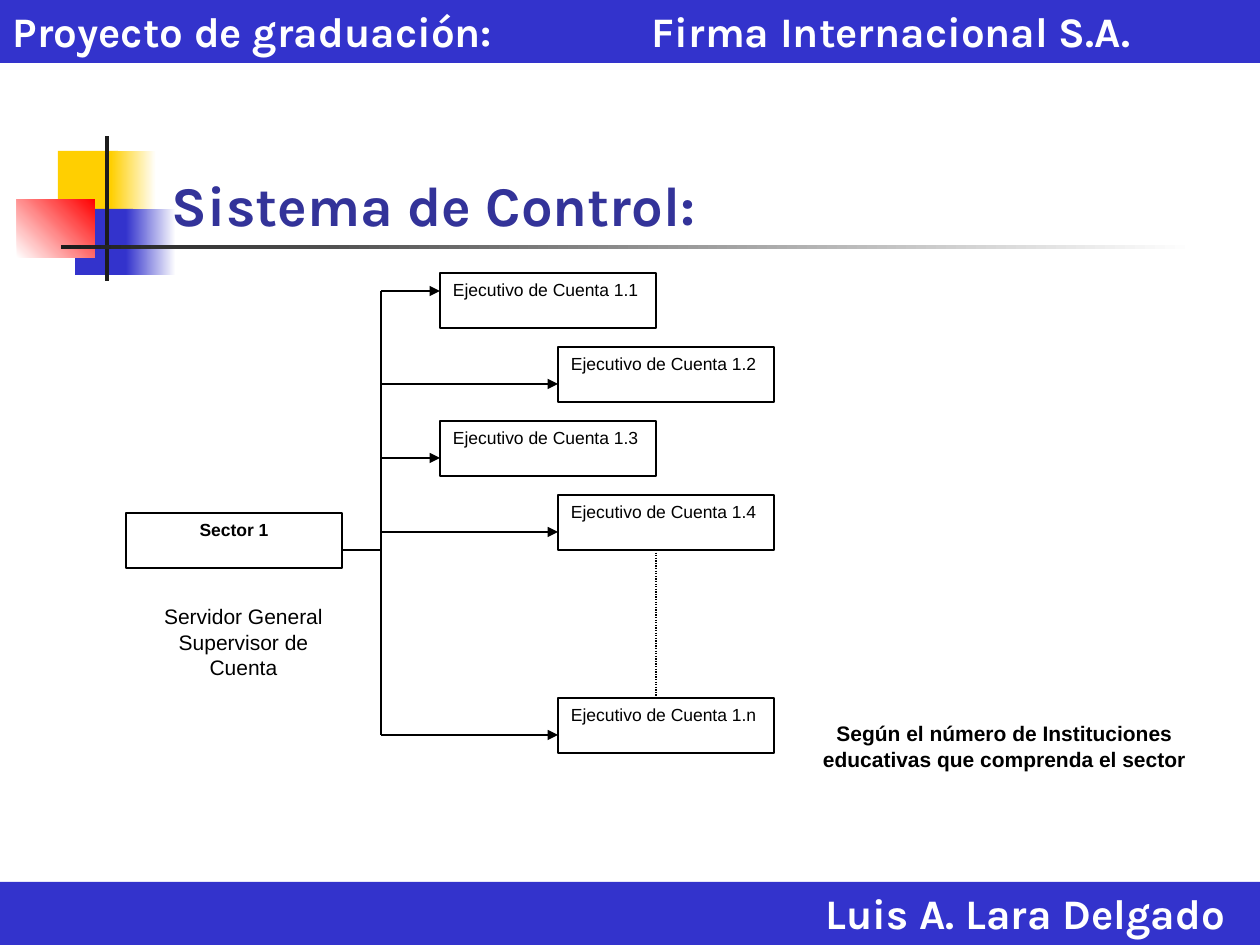
from lxml.etree import SubElement
from pptx import Presentation
from pptx.dml.color import RGBColor
from pptx.enum.dml import MSO_LINE
from pptx.enum.shapes import MSO_CONNECTOR, MSO_SHAPE
from pptx.enum.text import MSO_ANCHOR, MSO_AUTO_SIZE, PP_ALIGN
from pptx.oxml.ns import qn
from pptx.util import Emu, Pt

COLORS = {
    "white": "FFFFFF",
    "black": "000000",
    "ink": "1C1C1C",
    "blue": "3333CC",
    "navy": "333399",
    "yellow": "FFCF01",
    "red": "FF0000",
}
PX_PER_INCH = 126
INSET = 13


def px(length):
    return Emu(round(length * 914400 / PX_PER_INCH))


def rgb(name):
    return RGBColor.from_string(COLORS[name])


def write(shape, text, size=10, font="Arial", color="black", bold=False,
          align=PP_ALIGN.LEFT, anchor=MSO_ANCHOR.TOP, right=INSET, tab=None):
    frame = shape.text_frame
    frame.word_wrap = True
    frame.auto_size = MSO_AUTO_SIZE.NONE
    frame.vertical_anchor = anchor
    frame.margin_left, frame.margin_right = px(INSET), px(right)
    frame.margin_top = frame.margin_bottom = px(6)
    frame.text = text
    for paragraph in frame.paragraphs:
        paragraph.alignment = align
        if tab:
            stops = SubElement(paragraph._p.get_or_add_pPr(), qn("a:tabLst"))
            SubElement(stops, qn("a:tab"), pos=str(px(tab)), algn="l")
        for run in paragraph.runs:
            run.font.size = Pt(size)
            run.font.name = font
            run.font.bold = bold
            run.font.color.rgb = rgb(color)


class ControlSlide:
    heading = {"font": "Karla", "bold": True}
    line_width = Pt(0.75)

    def __init__(self, deck):
        self.slide = deck.slides.add_slide(deck.slide_layouts[5])

    def rect(self, x, y, width, height, fill="white", outlined=False):
        shape = self.slide.shapes.add_shape(
            MSO_SHAPE.RECTANGLE, px(x), px(y), px(width), px(height))
        shape.shadow.inherit = False
        shape.fill.solid()
        shape.fill.fore_color.rgb = rgb(fill)
        if outlined:
            shape.line.color.rgb = rgb("black")
            shape.line.width = self.line_width
        else:
            shape.line.fill.background()
        return shape

    def fade(self, x, y, width, height, start, end, angle=0):
        fill = self.rect(x, y, width, height).fill
        fill.gradient()
        fill.gradient_angle = angle
        for stop, color in zip(fill.gradient_stops, (start, end)):
            stop.color.rgb = rgb(color)

    def title(self, x, y, width, height, text):
        title = self.slide.shapes.title
        title.element.getparent().append(title.element)
        title.left, title.top = px(x), px(y)
        title.width, title.height = px(width), px(height)
        write(title, text, size=32, color="navy", anchor=MSO_ANCHOR.BOTTOM, **self.heading)

    def band(self, y, text, **style):
        write(self.rect(0, y, 1260, 63, "blue"), text, size=24, color="white",
              **self.heading, **style)

    def box(self, x, y, text, **style):
        write(self.rect(x, y, 216, 55, outlined=True), text, **style)

    def caption(self, x, y, width, height, text, **style):
        write(self.rect(x, y, width, height), text, size=12,
              align=PP_ALIGN.CENTER, **style)

    def link(self, x1, y1, x2, y2, arrow=False, dash=None):
        link = self.slide.shapes.add_connector(
            MSO_CONNECTOR.STRAIGHT, px(x1), px(y1), px(x2), px(y2))
        link.line.color.rgb = rgb("black")
        link.line.width = self.line_width
        if dash:
            link.line.dash_style = dash
        if arrow:
            SubElement(link.line._get_or_add_ln(), qn("a:tailEnd"), type="triangle")
        SubElement(link.element.spPr, qn("a:effectLst"))


def main():
    deck = Presentation()
    deck.slide_width, deck.slide_height = px(1260), px(945)
    page = ControlSlide(deck)

    page.rect(58, 151, 60, 66, "yellow")
    page.fade(111, 151, 45, 66, "yellow", "white")
    page.rect(75, 209, 58, 66, "blue")
    page.fade(126, 209, 50, 66, "blue", "white")
    page.fade(17, 199, 78, 59, "white", "red", angle=45)
    page.rect(105, 136, 4, 145, "ink")
    page.fade(61, 245, 1134, 4, "ink", "white")
    page.title(159, 86, 1074, 158, "Sistema de Control:")

    page.band(882, "Luis A. Lara Delgado", align=PP_ALIGN.RIGHT, right=35)
    page.band(0, "Proyecto de graduación:\tFirma Internacional S.A.", tab=639)

    trunk, near, far = 381, 440, 558
    first_top, step, last_top = 273, 74, 698
    executives = [
        ("1.1", near, first_top, 18),
        ("1.2", far, first_top + step, 37),
        ("1.3", near, first_top + 2 * step, 37),
        ("1.4", far, first_top + 3 * step, 37),
        ("1.n", far, last_top, 37),
    ]
    page.box(126, 513, "Sector 1", bold=True, align=PP_ALIGN.CENTER)
    for number, left, top, entry in executives:
        page.box(left, top, f"Ejecutivo de Cuenta {number}")
        page.link(trunk, top + entry, left, top + entry, arrow=True)
    page.link(trunk, first_top + 18, trunk, last_top + 37)
    page.link(342, 550, trunk, 550)
    page.link(656, 550, 656, last_top, dash=MSO_LINE.ROUND_DOT)

    page.caption(136, 598, 215, 96, "Servidor General\nSupervisor de Cuenta")
    page.caption(802, 715, 405, 94,
                 "Según el número de Instituciones educativas que comprenda el sector",
                 bold=True)
    deck.save("out.pptx")


if __name__ == "__main__":
    main()
